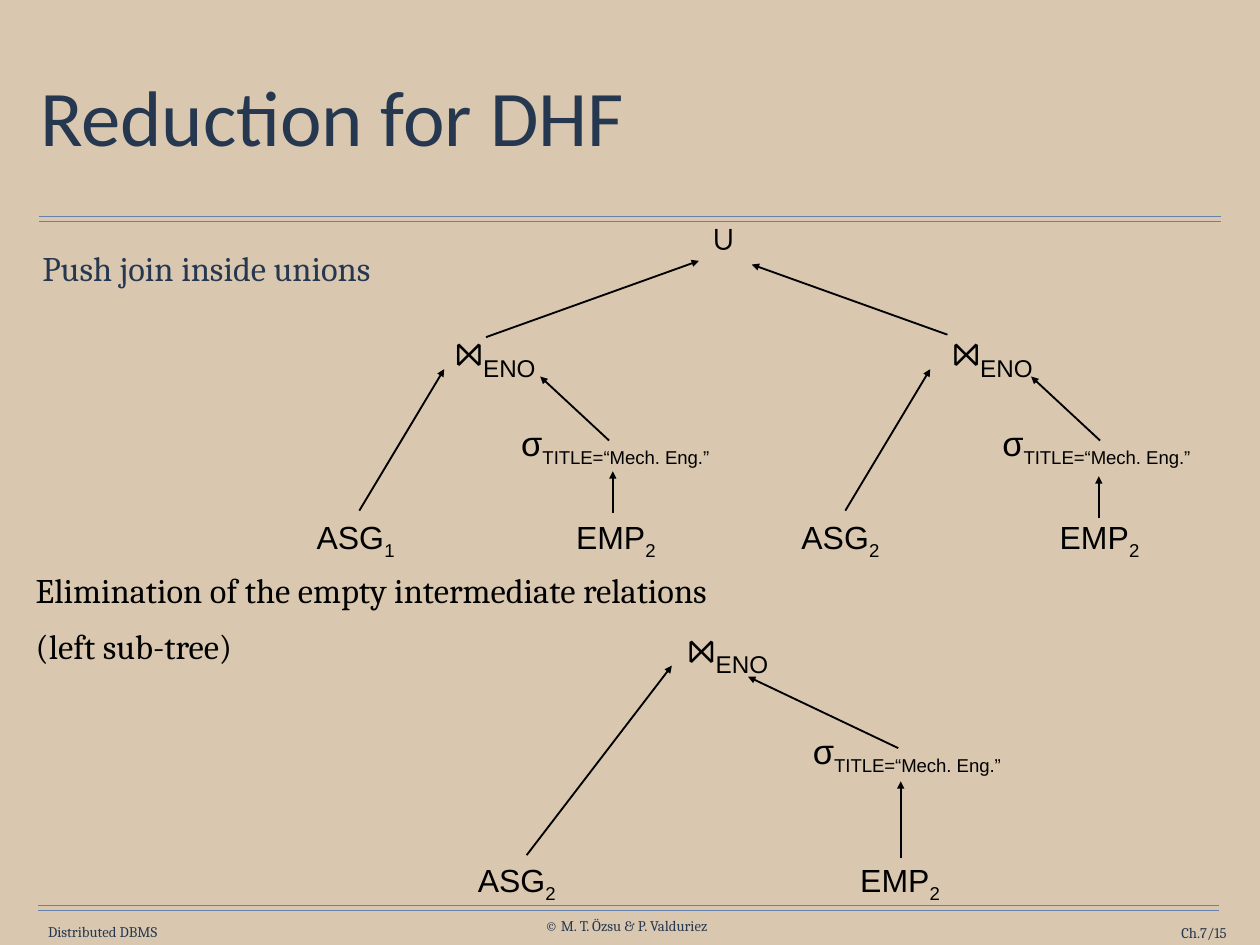
from dataclasses import dataclass
from pptx import Presentation
from pptx.dml.color import RGBColor as RGB
from pptx.enum.shapes import MSO_CONNECTOR as CONN
from pptx.enum.text import MSO_ANCHOR as ANCHOR, MSO_AUTO_SIZE as AUTO, PP_ALIGN as ALIGN
from pptx.oxml.ns import qn
from pptx.util import Pt
from lxml.etree import SubElement


@dataclass(frozen=True)
class Theme:
    sand: RGB = RGB(0xD9, 0xC8, 0xAF)
    navy: RGB = RGB(0x26, 0x37, 0x50)
    blue: RGB = RGB(0x66, 0x82, 0xAA)
    black: RGB = RGB(0, 0, 0)
    heading: str = "Calibri"
    serif: str = "Cambria"
    sans: str = "Arial"
    title: int = 64
    join: int = 36
    join_sub: int = 34
    text: int = 28
    node: int = 26
    footer: int = 12


T = Theme()

# Places of the nodes and the (from, to) arrows of each sub-tree
SUBTREES = [
    dict(fragment="1", asg=(246, 416), emp=(457, 416), sigma=(402, 338), join=(346, 257),
         arrows=[(292, 415, 361, 300), (498, 417, 498, 383), (495, 358, 439, 306)]),
    dict(fragment="2", asg=(640, 416), emp=(850, 416), sigma=(793, 338), join=(750, 257),
         arrows=[(687, 415, 756, 300), (893, 421, 893, 387), (894, 358, 838, 306)]),
    dict(fragment="2", asg=(377, 694), emp=(688, 694), sigma=(639, 588), join=(535, 498),
         arrows=[(428, 695, 546, 541), (732, 697, 732, 635), (730, 608, 608, 550)]),
]
UNION_ARROWS = [(395, 274, 568, 212), (770, 272, 611, 215)]


def set_frame(tf, inset_x, inset_y, **formats):
    formats = dict(margin_left=Pt(inset_x), margin_right=Pt(inset_x), margin_top=Pt(inset_y),
                   margin_bottom=Pt(inset_y), auto_size=AUTO.NONE, **formats)
    for name, value in formats.items():
        setattr(tf, name, value)


def add_run(p, text, size, font, color, sub=False):
    r = p.add_run()
    r.text = text
    for name, value in dict(size=Pt(size), name=font).items():
        setattr(r.font, name, value)
    r.font.color.rgb = color
    if sub:
        r.font._element.set("baseline", "-25000")


def add_text(s, box, lines, size, color, inset=(0, 0), wrap=True, align=ALIGN.LEFT,
             anchor=ANCHOR.TOP, spacing=1.0, gap=0):
    tf = s.shapes.add_textbox(*map(Pt, box)).text_frame
    set_frame(tf, *inset, word_wrap=wrap, vertical_anchor=anchor)
    for i, line in enumerate(lines):
        p = tf.add_paragraph() if i else tf.paragraphs[0]
        p.alignment, p.line_spacing = align, spacing
        if i:
            p.space_before = Pt(gap)
        add_run(p, line, size, T.serif, color)


def add_node(s, at, size, symbol, sub="", symbol_style=(T.node, T.sans), sub_size=T.node,
             wrap=False):
    """Add a centred operator or relation with its subscript."""
    tf = s.shapes.add_textbox(*map(Pt, at + size)).text_frame
    set_frame(tf, 10, 5, word_wrap=wrap)
    p = tf.paragraphs[0]
    p.alignment = ALIGN.CENTER
    add_run(p, symbol, *symbol_style, T.black)
    if sub:
        add_run(p, sub, sub_size, T.sans, T.black, sub=True)


def add_line(s, ends, color, width, arrow=False):
    line = s.shapes.add_connector(CONN.STRAIGHT, *map(Pt, ends))
    line.line.color.rgb = color
    line.line.width = Pt(width)
    if arrow:
        SubElement(line.line._get_or_add_ln(), qn("a:tailEnd"), type="triangle")
    SubElement(line._element.spPr, qn("a:effectLst"))


def add_subtree(s, fragment, asg, emp, sigma, join, arrows):
    add_node(s, asg, (86, 42), "ASG", fragment)
    add_node(s, emp, (87, 42), "EMP", "2")
    add_node(s, sigma, (196, 44), "σ", "TITLE=“Mech. Eng.”", (T.text, T.sans))
    add_node(s, join, (113, 54), "⋈", "ENO", (T.join, T.serif), T.join_sub, wrap=True)
    for ends in arrows:
        add_line(s, ends, T.black, 1.5, arrow=True)


def set_title(s, text):
    sp = s.shapes.title
    for name, value in dict(left=28, top=35, width=996, height=127).items():
        setattr(sp, name, Pt(value))
    set_frame(sp.text_frame, 4.5, 4.5, word_wrap=True, vertical_anchor=ANCHOR.MIDDLE)
    p = sp.text_frame.paragraphs[0]
    p.alignment, p.line_spacing = ALIGN.LEFT, 0.9
    add_run(p, text, T.title, T.heading, T.navy)


def add_frame_lines_and_footer(s):
    for left, top in ((32, 176), (31, 736)):
        for y in (top, top + 4):
            add_line(s, (left, y, left + 960, y), T.blue, 1)
    for box, text, align, wrap in (
        ((34, 749.5, 99, 14.5), "Distributed DBMS", ALIGN.CENTER, False),
        ((434, 745, 150, 14.5), "© M. T. Özsu & P. Valduriez", ALIGN.CENTER, False),
        ((886, 751, 111, 14.5), "Ch.7/15", ALIGN.RIGHT, True),
    ):
        add_text(s, box, [text], T.footer, T.navy, wrap=wrap, align=align, anchor=ANCHOR.MIDDLE)


def main():
    prs = Presentation()
    prs.slide_width, prs.slide_height = Pt(1024), Pt(768)
    s = prs.slides.add_slide(prs.slide_layouts[5])
    s.background.fill.solid()
    s.background.fill.fore_color.rgb = T.sand

    add_frame_lines_and_footer(s)
    set_title(s, "Reduction for DHF")
    add_text(s, (24.5, 186, 324, 54), ["Push join inside unions"], T.text, T.navy,
             inset=(10, 5), spacing=1.3)
    add_text(s, (24.5, 458, 802, 96),
             ["Elimination of the empty intermediate relations", "(left sub-tree)"],
             T.text, T.black, inset=(4.5, 4.5), gap=12)

    add_node(s, (567, 171), (42, 44), "∪", symbol_style=(T.text, T.sans))
    for ends in UNION_ARROWS:
        add_line(s, ends, T.black, 1.5, arrow=True)
    for subtree in SUBTREES:
        add_subtree(s, **subtree)
    prs.save("out.pptx")


if __name__ == "__main__":
    main()
